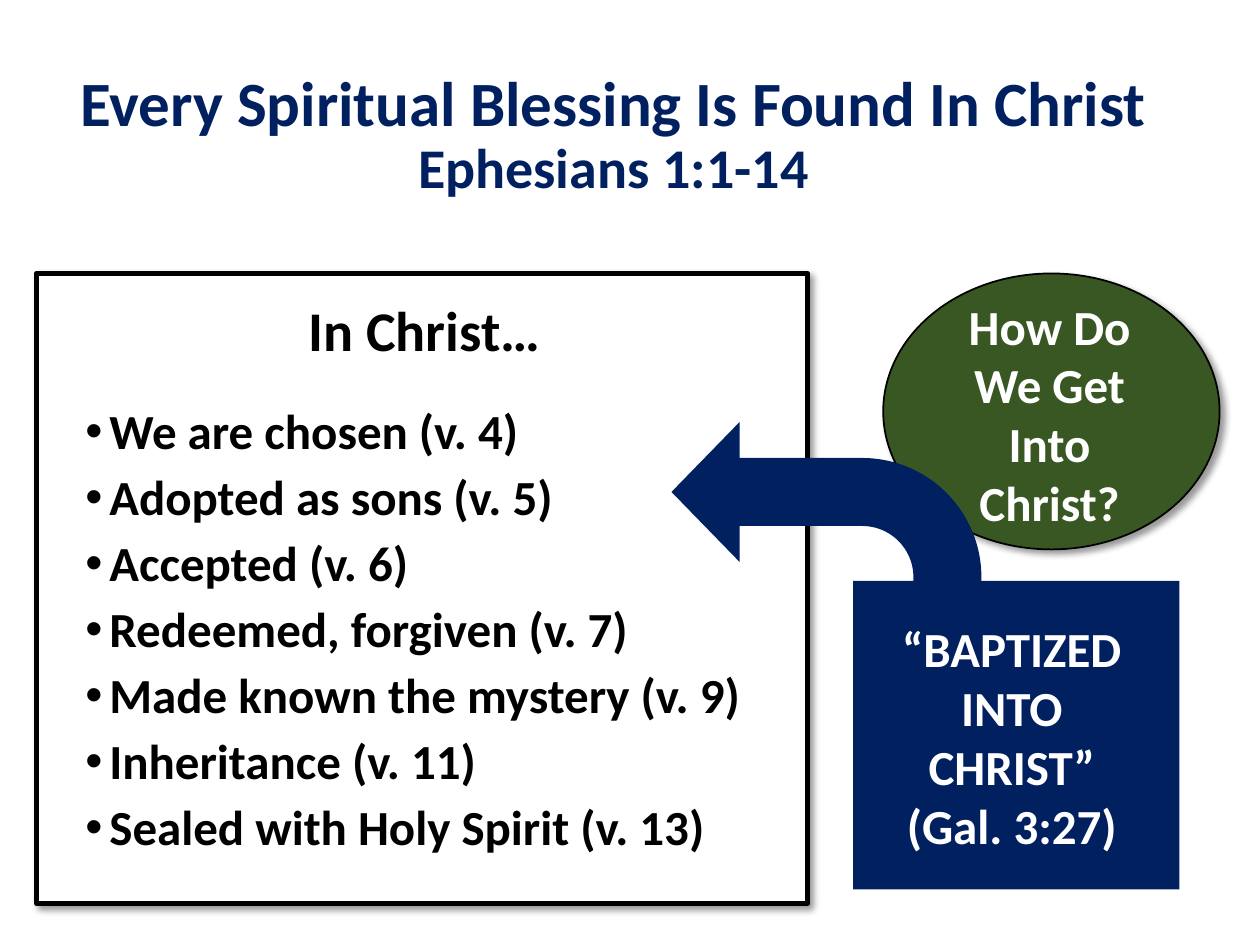
import pptx
import pptx.util
import pptx.oxml
import pptx.oxml.ns
import pptx.dml.color
import pptx.enum.shapes
import pptx.enum.text

Inches, Pt = pptx.util.Inches, pptx.util.Pt
SHAPE = pptx.enum.shapes.MSO_SHAPE
ALIGN = pptx.enum.text.PP_ALIGN
ANCHOR = pptx.enum.text.MSO_ANCHOR
FIT = pptx.enum.text.MSO_AUTO_SIZE

COLORS = {"navy": "002060", "green": "385723", "white": "FFFFFF", "black": "000000"}
BLESSINGS = [
    "We are chosen (v. 4)",
    "Adopted as sons (v. 5)",
    "Accepted (v. 6)",
    "Redeemed, forgiven (v. 7)",
    "Made known the mystery (v. 9)",
    "Inheritance (v. 11)",
    "Sealed with Holy Spirit (v. 13)",
]


def rgb(name):
    """Return the named colour."""
    return pptx.dml.color.RGBColor.from_string(COLORS[name])


def add_run(p, text, size=28, color="white"):
    """Add a bold run of text to a paragraph."""
    r = p.add_run()
    r.text = text
    r.font.name = "Calibri"
    r.font.size = Pt(size)
    r.font.bold = True
    r.font.color.rgb = rgb(color)


def add_shadow(sp):
    """Give a shape a soft shadow to the lower right."""
    sp._element.spPr.append(pptx.oxml.parse_xml(
        f'<a:effectLst {pptx.oxml.ns.nsdecls("a")}>'
        f'<a:outerShdw blurRad="{Pt(4)}" dist="{Pt(3)}" dir="2700000" algn="tl" rotWithShape="0">'
        f'<a:srgbClr val="{COLORS["black"]}"><a:alpha val="40000"/></a:srgbClr>'
        '</a:outerShdw></a:effectLst>'))


def add_block(s, kind, x, y, w, h, fill, line=None, shadow=False):
    """Add a filled preset shape, with an outline of the given width if any."""
    sp = s.shapes.add_shape(kind, Inches(x), Inches(y), Inches(w), Inches(h))
    sp.fill.solid()
    sp.fill.fore_color.rgb = rgb(fill)
    if line:
        sp.line.color.rgb = rgb("black")
        sp.line.width = Pt(line)
    else:
        sp.line.fill.background()
    if shadow:
        add_shadow(sp)
    else:
        sp.shadow.inherit = False
    return sp


def add_text_frame(s, x, y, w, h):
    """Add a wrapping text box and return its frame."""
    tf = s.shapes.add_textbox(Inches(x), Inches(y), Inches(w), Inches(h)).text_frame
    tf.word_wrap = True
    return tf


def add_title(s, x, y, w, h):
    """Add the title with its smaller scripture reference."""
    tf = add_text_frame(s, x, y, w, h)
    tf.vertical_anchor = ANCHOR.MIDDLE
    p = tf.paragraphs[0]
    p.alignment = ALIGN.CENTER
    p.line_spacing = 0.9
    add_run(p, "Every Spiritual Blessing Is Found In Christ ", size=36, color="navy")
    add_run(p, "Ephesians 1:1-14", size=32, color="navy")


def add_bullet(p):
    """Give a paragraph a hanging round bullet."""
    pPr = p._p.get_or_add_pPr()
    pPr.set("marL", str(Inches(0.19)))
    pPr.set("indent", str(-Inches(0.19)))
    ns = pptx.oxml.ns.nsdecls("a")
    pPr.append(pptx.oxml.parse_xml(f'<a:buFont {ns} typeface="Arial"/>'))
    pPr.append(pptx.oxml.parse_xml(f'<a:buChar {ns} char="•"/>'))


def add_blessings(s, x, y, w, h):
    """Add the framed list of blessings."""
    add_block(s, SHAPE.RECTANGLE, x, y, w, h, "white", line=3, shadow=True)
    tf = add_text_frame(s, x + 0.29, y + 0.19, w - 0.54, h - 0.3)
    p = tf.paragraphs[0]
    p.alignment = ALIGN.CENTER
    p.line_spacing = 0.9
    add_run(p, "In Christ…", size=32, color="black")
    for i, text in enumerate(BLESSINGS):
        p = tf.add_paragraph()
        add_bullet(p)
        p.line_spacing = 0.9
        p.space_before = Pt(7.5 if i else 24.5)
        add_run(p, text, color="black")


def add_caption(s, x, y, w, h, text):
    """Add centred white text that sits on a block."""
    tf = add_text_frame(s, x, y, w, h)
    tf.auto_size = FIT.SHAPE_TO_FIT_TEXT
    p = tf.paragraphs[0]
    p.alignment = ALIGN.CENTER
    add_run(p, text)


def add_question(s, x, y, w, h):
    """Add the oval with the question."""
    add_block(s, SHAPE.OVAL, x, y, w, h, "green", line=1, shadow=True)
    add_caption(s, x + 0.3, y + 0.13, 2.04, 1.99, "How Do We Get Into Christ?")


def add_arrow(s, x, y, w, h):
    """Add the bent arrow that points left into the list."""
    sp = add_block(s, SHAPE.BENT_ARROW, x, y, w, h, "navy")
    for i, value in enumerate([0.25, 0.257, 0.25, 0.438]):
        sp.adjustments[i] = value
    sp._element.spPr.xfrm.set("flipH", "1")


def add_answer(s, x, y, w, h):
    """Add the square with the answer and the arrow leaving it."""
    add_block(s, SHAPE.RECTANGLE, x, y, w, h, "navy")
    add_arrow(s, x - 1.44, y - 1.26, 2.46, 2.16)
    add_caption(s, x + 0.24, y + 0.25, 2.04, 1.99, "“BAPTIZED INTO CHRIST” (Gal. 3:27)")


def main():
    """Build and save the slide."""
    prs = pptx.Presentation()
    prs.slide_width, prs.slide_height = Inches(10), Inches(7.5)
    s = prs.slides.add_slide(prs.slide_layouts[6])
    add_title(s, 0.49, 0.36, 8.76, 1.45)
    add_blessings(s, 0.29, 2.17, 6.12, 5)
    add_question(s, 7.01, 2.17, 2.67, 2.19)
    add_answer(s, 6.77, 4.61, 2.59, 2.45)
    prs.save("out.pptx")


if __name__ == "__main__":
    main()
